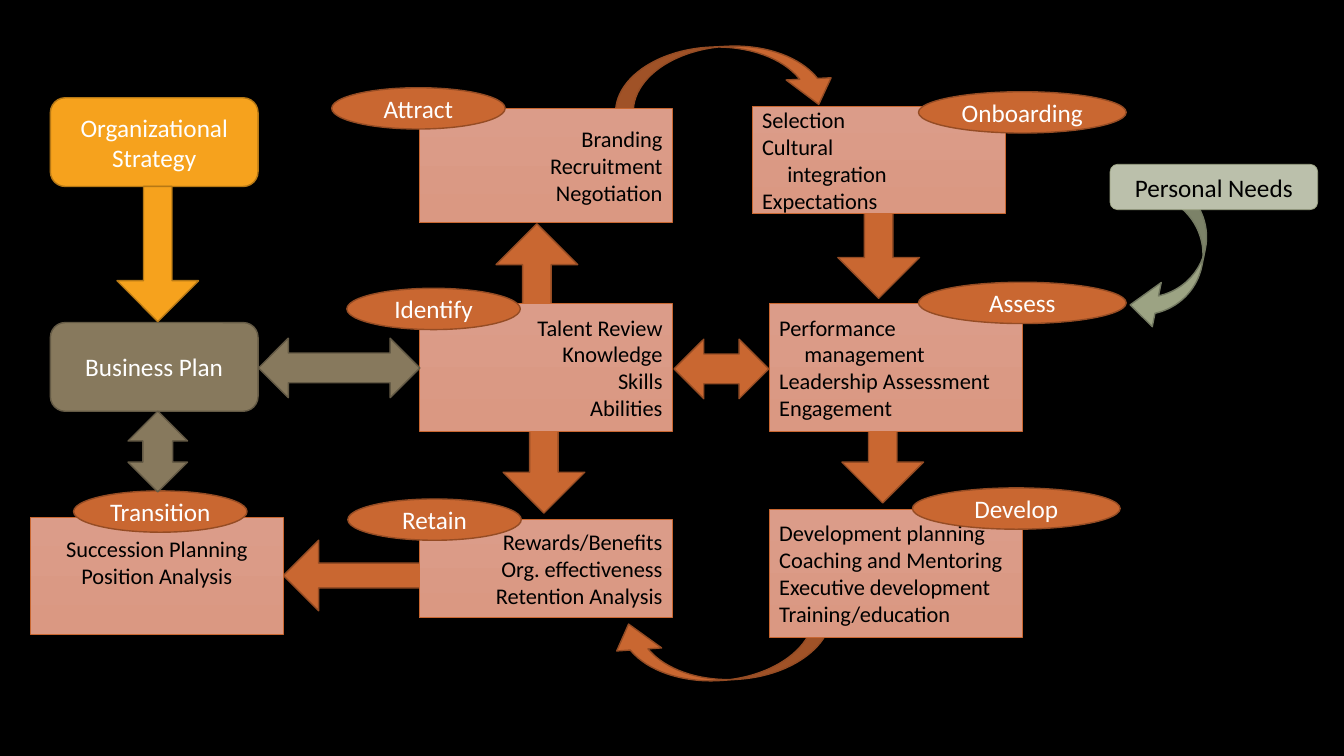
"""Draw a talent management cycle as linked boxes, ovals and block arrows."""
from dataclasses import dataclass, field
from typing import Optional

from pptx import Presentation
from pptx.dml.color import RGBColor
from pptx.enum.shapes import MSO_SHAPE
from pptx.enum.text import MSO_ANCHOR, PP_ALIGN
from pptx.util import Emu, Pt

SCALE = 9144


@dataclass(frozen=True)
class Tone:
    """Fill, outline and text colour, with a second fill for a gradient."""
    fill: str
    line: str
    ink: str = "FFFFFF"
    fade: Optional[str] = None
    width: float = 1


@dataclass(frozen=True)
class Theme:
    """Colours, font and type sizes of the slide."""
    back: str = "000000"
    font: str = "Calibri"
    label: int = 18
    body: int = 16
    rust: Tone = Tone("C96731", "954C24")
    gold: Tone = Tone("F6A21D", "B67815")
    olive: Tone = Tone("87795D", "645A45")
    sage: Tone = Tone("9CA383", "737961")
    rose: Tone = Tone("DB9C89", "C96731", "000000", "DA9882", 0.5)
    mist: Tone = Tone("BBC0AB", "9CA383", "000000", "B9BEA8", 0.5)


THEME = Theme()
DOWN, BOTH = MSO_SHAPE.DOWN_ARROW, MSO_SHAPE.UP_DOWN_ARROW
CURVE = MSO_SHAPE.CURVED_LEFT_ARROW
ADJUST = {DOWN: (0.349, 0.5), BOTH: (0.5, 0.5), CURVE: (0.284, 0.72, 0.416)}
LEFT, MID, RIGHT = PP_ALIGN.LEFT, PP_ALIGN.CENTER, PP_ALIGN.RIGHT
BOX_W, OVAL_H, CARD_W = 251, 41, 206
NARROW, BROAD = 172, 206
INDENT, PAD, LIFT = 25, 5, 32


@dataclass(frozen=True)
class Arrow:
    """A block arrow, placed before it is turned."""
    kind: MSO_SHAPE
    left: int
    top: int
    width: int
    height: int
    turn: float = 0
    tone: Tone = THEME.rust


@dataclass(frozen=True)
class Card:
    """A rounded box with a label."""
    text: str
    left: int
    top: int
    height: int
    tone: Tone


@dataclass(frozen=True)
class Oval:
    """The name of a stage."""
    text: str
    left: int
    top: int
    width: int


@dataclass(frozen=True)
class Stage:
    """A box of topics with its oval."""
    lines: list[str]
    left: int
    top: int
    height: int
    align: PP_ALIGN
    oval: Oval
    dents: list[int] = field(default_factory=list)
    foot: int = PAD


UNDER = [
    Arrow(DOWN, 499, 408, 81, 101),
    Arrow(DOWN, 329, 488, 70, 166, 90),
    Arrow(DOWN, 835, 365, 81, 134),
    Arrow(DOWN, 831, 162, 81, 134),
    Arrow(DOWN, 492, 222, 81, 101, 180),
    Arrow(CURVE, 1131, 180, 62, 152, 11.5, THEME.sage),
    Arrow(CURVE, 684, 532, 62, 224, 86.1),
    Arrow(CURVE, 690, -35, 62, 224, 267.2),
]
OVER = [
    Arrow(DOWN, 116, 185, 81, 134, 0, THEME.gold),
    Arrow(BOTH, 686, 319, 59, 94, 90),
    Arrow(BOTH, 127, 408, 59, 80, 0, THEME.olive),
    Arrow(BOTH, 307, 285, 59, 160, 270, THEME.olive),
]
CARDS = [
    Card("Organizational Strategy", 50, 97, 88, THEME.gold),
    Card("Business Plan", 50, 320, 88, THEME.olive),
    Card("Personal Needs", 1101, 163, 45, THEME.mist),
]
STAGES = [
    Stage(["Branding", "Recruitment", "Negotiation"], 416, 108, 113, RIGHT,
          Oval("Attract", 329, 87, NARROW)),
    Stage(["Talent Review", "Knowledge", "Skills", "Abilities"],
          416, 301, 127, RIGHT, Oval("Identify", 344, 286, NARROW)),
    Stage(["Selection", "Cultural", "integration", "Expectations"],
          746, 106, 106, LEFT, Oval("Onboarding", 911, 91, BROAD), [2]),
    Stage(["Performance", "management", "Leadership Assessment", "Engagement"],
          763, 301, 127, LEFT, Oval("Assess", 911, 280, BROAD), [1]),
    Stage(["Development planning", "Coaching and Mentoring",
           "Executive development", "Training/education"],
          763, 505, 127, LEFT, Oval("Develop", 905, 484, BROAD)),
    Stage(["Rewards/Benefits", "Org. effectiveness", "Retention Analysis"],
          416, 515, 98, RIGHT, Oval("Retain", 345, 495, NARROW)),
    Stage(["Succession Planning", "Position Analysis"], 30, 513, 116, MID,
          Oval("Transition", 73, 487, NARROW), foot=LIFT),
]


def px(size: int) -> Emu:
    """Turn px into EMU."""
    return Emu(size * SCALE)


def rgb(code: str) -> RGBColor:
    """Read a colour code."""
    return RGBColor.from_string(code)


def draw(slide, kind: MSO_SHAPE, left: int, top: int, width: int,
         height: int, tone: Tone):
    """Add one filled and outlined shape."""
    shape = slide.shapes.add_shape(
        kind, px(left), px(top), px(width), px(height))
    shape.shadow.inherit = False
    if tone.fade:
        shape.fill.gradient()
        shape.fill.gradient_angle = 270
        for stop, code in zip(shape.fill.gradient_stops, (tone.fill, tone.fade)):
            stop.color.rgb = rgb(code)
    else:
        shape.fill.solid()
        shape.fill.fore_color.rgb = rgb(tone.fill)
    shape.line.color.rgb = rgb(tone.line)
    shape.line.width = Pt(tone.width)
    return shape


def write(shape, text: str, size: int, ink: str, align: PP_ALIGN = MID) -> None:
    """Set and format the text of a shape."""
    frame = shape.text_frame
    frame.word_wrap = True
    frame.vertical_anchor = MSO_ANCHOR.MIDDLE
    frame.text = text
    for para in frame.paragraphs:
        para.alignment = align
        for run in para.runs:
            run.font.name = THEME.font
            run.font.size = Pt(size)
            run.font.color.rgb = rgb(ink)


def add_arrow(slide, arrow: Arrow) -> None:
    """Draw a block arrow."""
    shape = draw(slide, arrow.kind, arrow.left, arrow.top, arrow.width,
                 arrow.height, arrow.tone)
    shape.rotation = arrow.turn
    for spot, value in enumerate(ADJUST[arrow.kind]):
        shape.adjustments[spot] = value


def add_card(slide, card: Card) -> None:
    """Draw a rounded box."""
    shape = draw(slide, MSO_SHAPE.ROUNDED_RECTANGLE, card.left, card.top,
                 CARD_W, card.height, card.tone)
    write(shape, card.text, THEME.label, card.tone.ink)


def add_stage(slide, stage: Stage) -> None:
    """Draw a topic box and the oval over its edge."""
    box = draw(slide, MSO_SHAPE.RECTANGLE, stage.left, stage.top, BOX_W,
               stage.height, THEME.rose)
    write(box, "\n".join(stage.lines), THEME.body, THEME.rose.ink, stage.align)
    box.text_frame.margin_bottom = px(stage.foot)
    for row in stage.dents:
        para = box.text_frame.paragraphs[row]
        para._p.get_or_add_pPr().set("marL", str(px(INDENT)))
    oval = stage.oval
    shape = draw(slide, MSO_SHAPE.OVAL, oval.left, oval.top, oval.width,
                 OVAL_H, THEME.rust)
    write(shape, oval.text, THEME.label, THEME.rust.ink)


def main() -> None:
    """Build and save the slide."""
    deck = Presentation()
    deck.slide_width, deck.slide_height = px(1333), px(750)
    slide = deck.slides.add_slide(deck.slide_layouts[6])
    slide.background.fill.solid()
    slide.background.fill.fore_color.rgb = rgb(THEME.back)
    for arrow in UNDER:
        add_arrow(slide, arrow)
    for card in CARDS:
        add_card(slide, card)
    for stage in STAGES:
        add_stage(slide, stage)
    for arrow in OVER:
        add_arrow(slide, arrow)
    deck.save("out.pptx")


if __name__ == "__main__":
    main()
